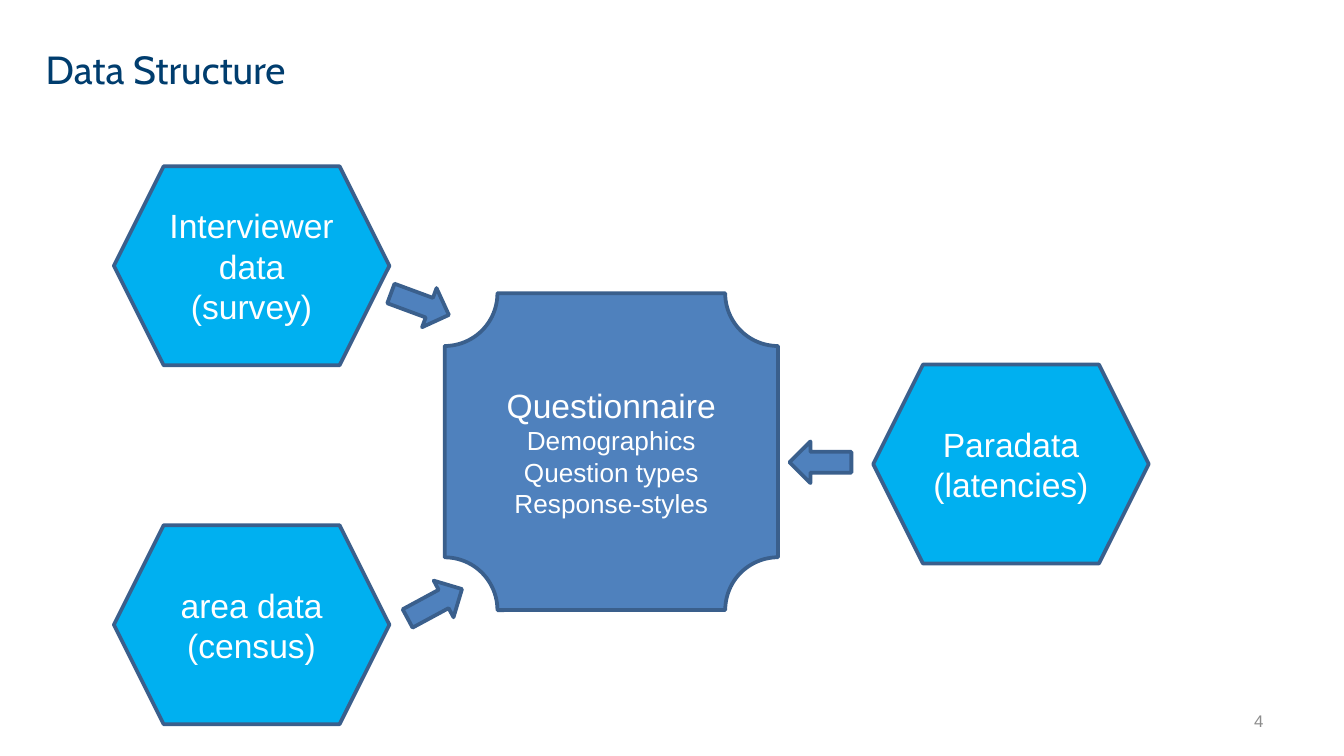
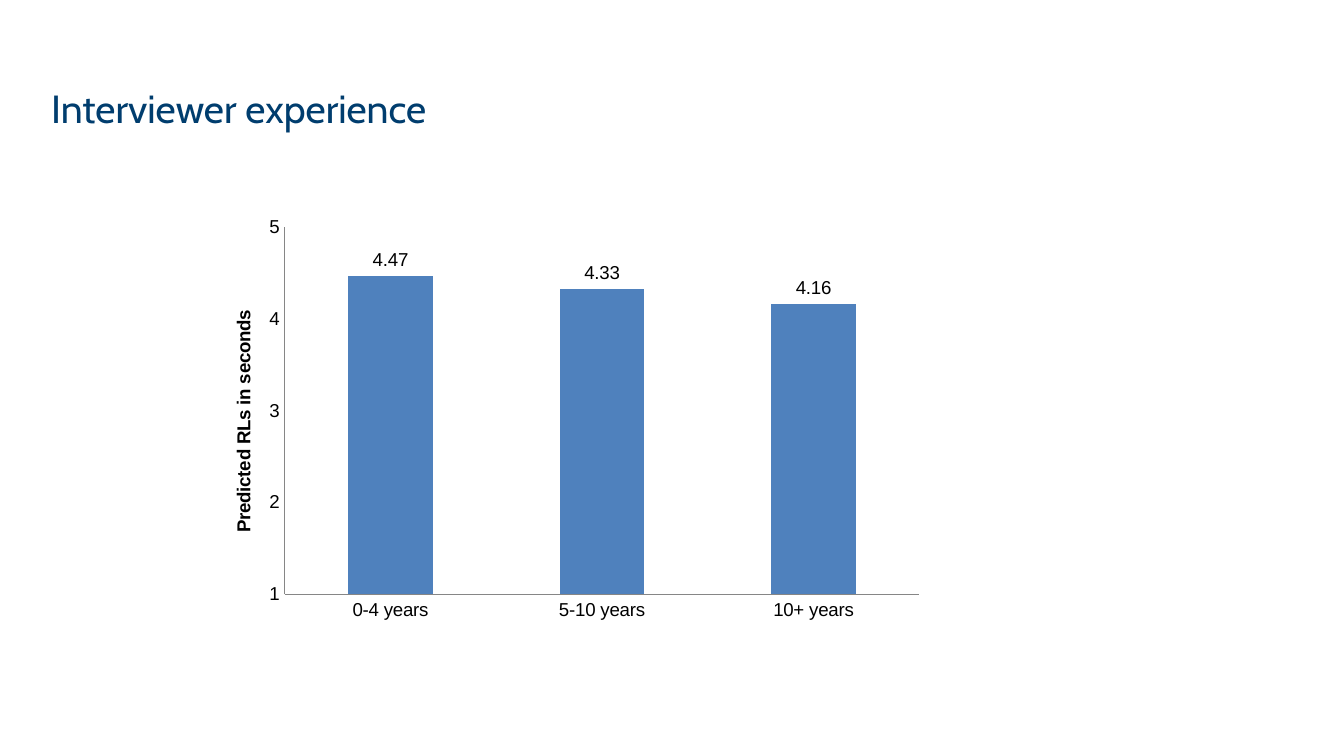
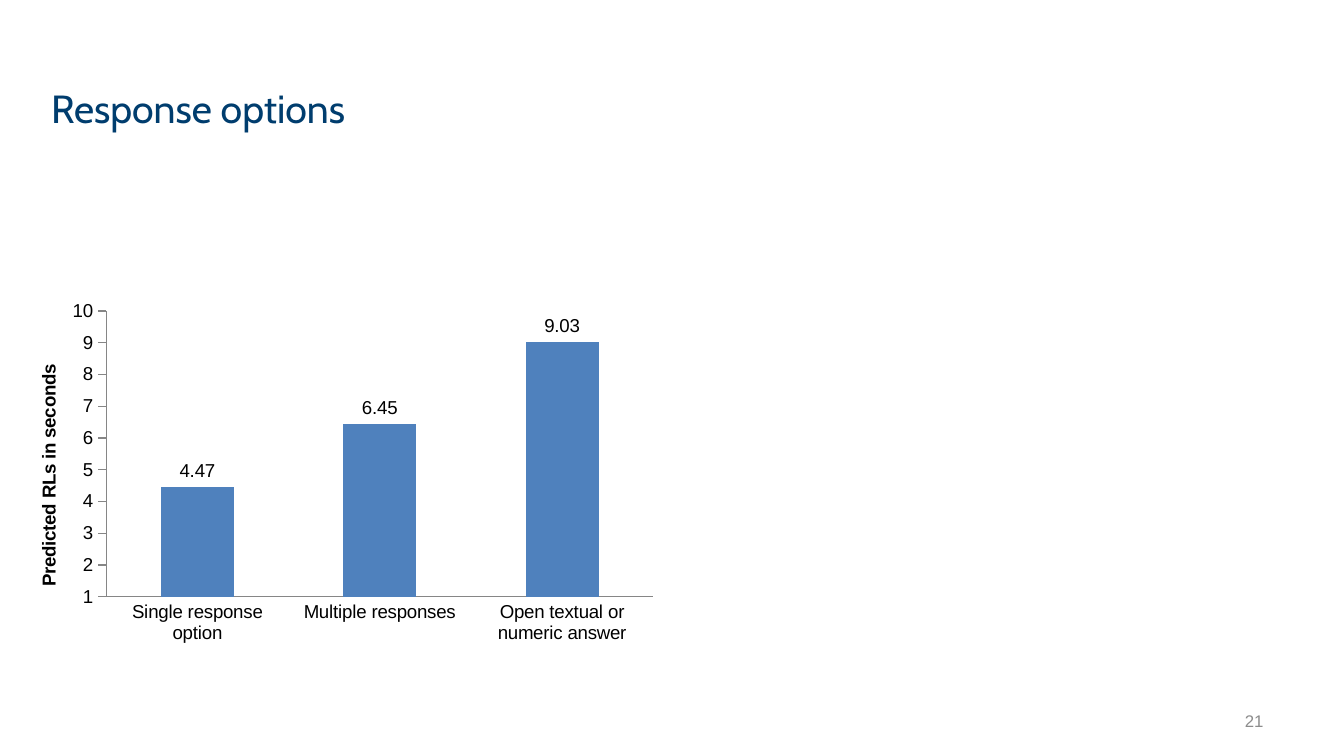
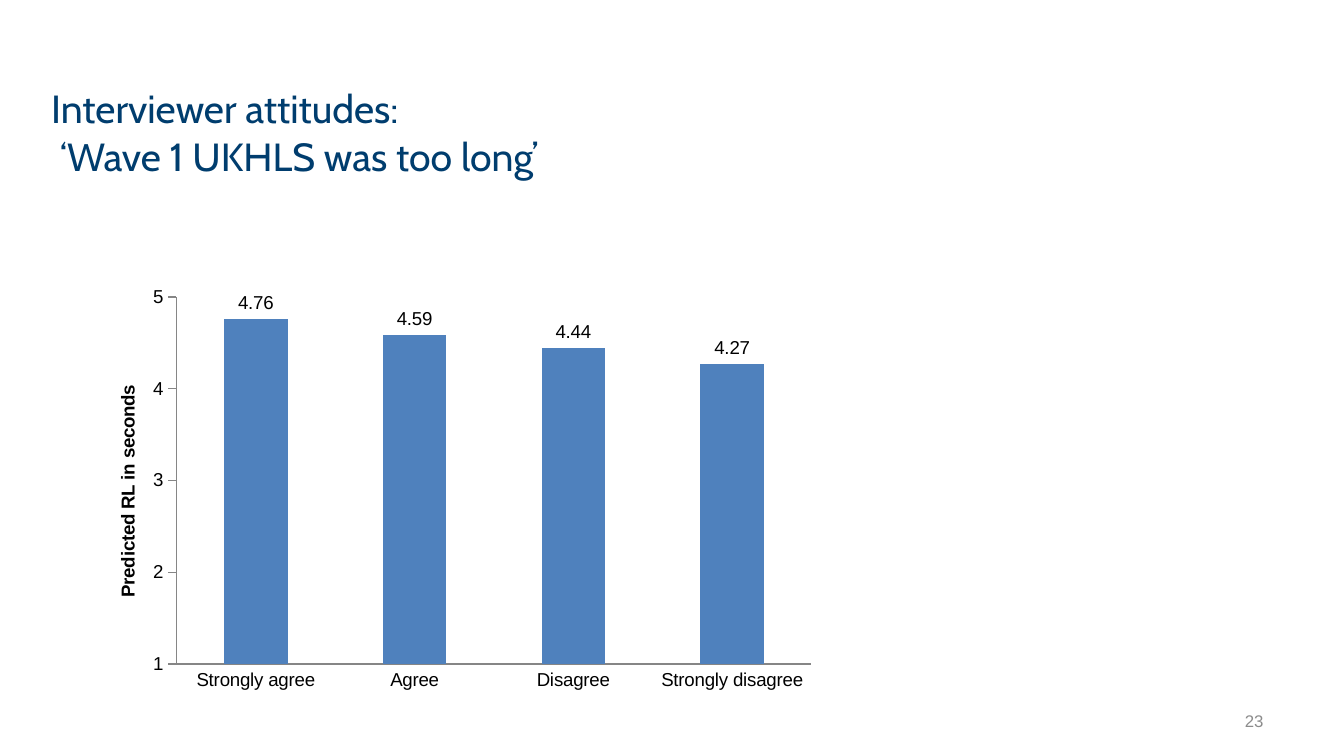
from lxml.etree import SubElement
from pptx import Presentation
from pptx.chart.data import CategoryChartData
from pptx.dml.color import RGBColor
from pptx.enum.chart import XL_CHART_TYPE as ChartType
from pptx.enum.chart import XL_LABEL_POSITION as LabelPosition
from pptx.enum.chart import XL_TICK_MARK as TickMark
from pptx.enum.shapes import MSO_SHAPE as Shape
from pptx.enum.text import MSO_ANCHOR as Anchor
from pptx.enum.text import MSO_AUTO_SIZE as AutoSize
from pptx.enum.text import PP_ALIGN as Align
from pptx.oxml.ns import qn
from pptx.util import Pt

COLORS = {
    "title": "003D6E",
    "number": "8C8C8C",
    "axis": "868686",
    "blue": "4F81BD",
    "outline": "3A5F8C",
    "cyan": "00B0F0",
    "white": "FFFFFF",
    "black": "000000",
}
BODY_FONT = "Arial"
TITLE_FONT = "Cabin"
TITLE_SIZE = (391, 54)
NUMBER_BOX = (516.2, 375.1, 167.8, 21.6)
HEXAGON_SIZE = (147.6, 106.6)
ARROW_SIZE = (22.3, 33.1)


def rgb(name):
    """Return the named colour."""
    return RGBColor.from_string(COLORS[name])


def set_font(font, size, color, name=BODY_FONT, bold=False):
    """Give a font its face, size, weight and colour."""
    font.name, font.size, font.bold = name, Pt(size), bold
    font.color.rgb = rgb(color)


def add_slide(presentation, title, position=(20.2, 41.8), number=None):
    """Add a slide with its title and, if given, its number."""
    slide = presentation.slides.add_slide(presentation.slide_layouts[5])
    heading = slide.shapes.title
    heading.left, heading.top = map(Pt, position)
    heading.width, heading.height = map(Pt, TITLE_SIZE)
    frame = heading.text_frame
    frame.auto_size = AutoSize.NONE
    frame.vertical_anchor = Anchor.TOP
    frame.text = title
    paragraph = frame.paragraphs[0]
    paragraph.alignment = Align.LEFT
    set_font(paragraph.font, 21, "title", TITLE_FONT)
    if number:
        frame = slide.shapes.add_textbox(*map(Pt, NUMBER_BOX)).text_frame
        frame.word_wrap = True
        frame.vertical_anchor = Anchor.MIDDLE
        frame.text = number
        frame.paragraphs[0].alignment = Align.RIGHT
        set_font(frame.paragraphs[0].font, 9, "number")
    return slide


def add_node(slide, kind, box, fill, lines=(), rotation=0):
    """Add an outlined shape with centred (text, size) lines."""
    shape = slide.shapes.add_shape(kind, *map(Pt, box))
    shape.shadow.inherit = False
    shape.rotation = rotation
    shape.fill.solid()
    shape.fill.fore_color.rgb = rgb(fill)
    shape.line.color.rgb = rgb("outline")
    shape.line.width = Pt(2)
    frame = shape.text_frame
    frame.word_wrap = True
    frame.vertical_anchor = Anchor.MIDDLE
    for index, (text, size) in enumerate(lines):
        paragraph = frame.add_paragraph() if index else frame.paragraphs[0]
        paragraph.text = text
        paragraph.alignment = Align.CENTER
        set_font(paragraph.font, size, "white")


def add_data_diagram(slide):
    """Draw the questionnaire and the data sources that feed it."""
    details = ("Demographics", "Question types", "Response-styles")
    lines = [("Questionnaire", 18)] + [(text, 14) for text in details]
    add_node(slide, Shape.PLAQUE, (238.2, 157.1, 178.6, 169.8), "blue", lines)
    sources = [
        (61, 89.1, ("Interviewer data", "(survey)")),
        (61, 281.4, ("area data", "(census)")),
        (467.8, 195.3, ("Paradata", "(latencies)")),
    ]
    for left, top, texts in sources:
        add_node(slide, Shape.HEXAGON, (left, top, *HEXAGON_SIZE), "cyan",
                 [(text, 18) for text in texts])
    for left, top, rotation in [(428.4, 231.1, 90), (213.8, 146.4, 290.3),
                                (221.8, 306.9, 241.6)]:
        add_node(slide, Shape.DOWN_ARROW, (left, top, *ARROW_SIZE), "blue",
                 rotation=rotation)


def set_layout(parent, index, **values):
    """Place a chart part by fractions of the chart area."""
    for old in parent.findall(qn("c:layout")):
        parent.remove(old)
    layout = parent.makeelement(qn("c:layout"))
    parent.insert(index, layout)
    manual = SubElement(layout, qn("c:manualLayout"))
    if "w" in values:
        SubElement(manual, qn("c:layoutTarget"), val="inner")
    for key, value in {"xMode": "edge", "yMode": "edge", **values}.items():
        SubElement(manual, qn(f"c:{key}"), val=str(value))


def add_column_chart(slide, box, data, axis_title, maximum, tick, plot, title_at):
    """Add a labelled column chart of response latencies."""
    chart_data = CategoryChartData(number_format="General")
    chart_data.categories = list(data)
    chart_data.add_series("Series 1", list(data.values()))
    chart = slide.shapes.add_chart(
        ChartType.COLUMN_CLUSTERED, *map(Pt, box), chart_data).chart
    chart.has_title = chart.has_legend = False
    set_font(chart.font, 10, "black")

    bars = chart.plots[0]
    bars.gap_width = 150
    bars.vary_by_categories = False
    fill = bars.series[0].format.fill
    fill.solid()
    fill.fore_color.rgb = rgb("blue")
    bars.has_data_labels = True
    labels = bars.data_labels
    labels.show_value = True
    labels.number_format, labels.number_format_is_linked = "#,##0.00", False
    labels.position = LabelPosition.OUTSIDE_END
    set_font(labels.font, 10, "black")

    values = chart.value_axis
    values.minimum_scale, values.maximum_scale, values.major_unit = 1, maximum, 1
    values.has_major_gridlines = False
    for axis, mark in ((chart.category_axis, TickMark.NONE), (values, tick)):
        axis.major_tick_mark, axis.minor_tick_mark = mark, TickMark.NONE
        axis.format.line.color.rgb = rgb("axis")
        axis.format.line.width = Pt(0.75)
        set_font(axis.tick_labels.font, 10, "black")

    frame = values.axis_title.text_frame
    frame.text = axis_title
    set_font(frame.paragraphs[0].font, 10, "black", bold=True)
    set_layout(values.axis_title._element, 1, **dict(zip("xy", title_at)))
    plot_area = chart._chartSpace.find(".//" + qn("c:plotArea"))
    set_layout(plot_area, 0, **dict(zip("xywh", plot)))


def main():
    """Build and save the slides."""
    presentation = Presentation()
    presentation.slide_width, presentation.slide_height = Pt(720), Pt(405)

    slide = add_slide(presentation, "Data Structure", (17.3, 20.9), "4")
    add_data_diagram(slide)

    slide = add_slide(presentation, "Interviewer experience")
    add_column_chart(
        slide, (105.1, 111.6, 395.3, 224.6),
        {"0-4 years": 4.47, "5-10 years": 4.33, "10+ years": 4.16},
        "Predicted RLs in seconds", 5, TickMark.NONE,
        (0.12, 0.045, 0.86, 0.876), (0.043, 0.235))

    slide = add_slide(presentation, "Response options", number="21")
    add_column_chart(
        slide, (0.7, 157, 355.7, 191.5),
        {"Single response option": 4.47, "Multiple responses": 6.45,
         "Open textual or numeric answer": 9.03},
        "Predicted RLs in seconds", 10, TickMark.OUTSIDE,
        (0.158, 0.05, 0.824, 0.8), (0.048, 0.19))

    slide = add_slide(
        presentation, "Interviewer attitudes:\v ‘Wave 1 UKHLS was too long’",
        number="23")
    add_column_chart(
        slide, (42.5, 149, 400.3, 224.6),
        {"Strongly agree": 4.76, "Agree": 4.59, "Disagree": 4.44,
         "Strongly disagree": 4.27},
        "Predicted RL in seconds", 5, TickMark.OUTSIDE,
        (0.13, 0.045, 0.85, 0.876), (0.044, 0.247))

    presentation.save("out.pptx")


if __name__ == "__main__":
    main()
